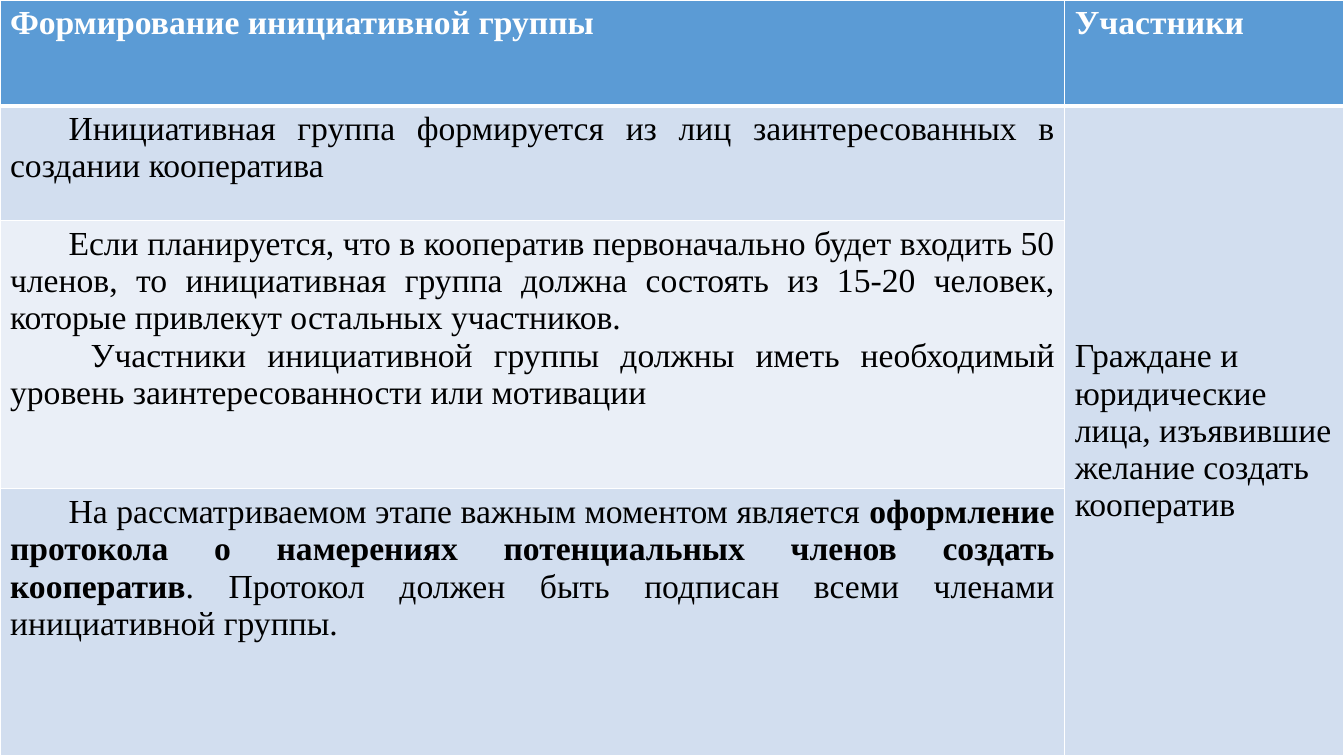
from lxml.etree import SubElement
from pptx import Presentation
from pptx.dml.color import RGBColor
from pptx.enum.text import MSO_ANCHOR, PP_ALIGN
from pptx.oxml.ns import qn
from pptx.util import Inches, Pt

WHITE, BLACK = "FFFFFF", "000000"
HEADER_BLUE, BAND_DARK, BAND_LIGHT = "5B9BD5", "D2DEEF", "EAEFF7"
COLUMN_WIDTHS = (10.56, 2.77)
ROW_HEIGHTS = (1.05, 1.14, 2.66, 2.65)
ROW_FILLS = (HEADER_BLUE, BAND_DARK, BAND_LIGHT, BAND_DARK)
FIRST_LINE = 0.58

HEADINGS = ("Формирование инициативной группы", "Участники")
PARTICIPANTS = "Граждане и юридические лица, изъявившие желание создать кооператив"
STAGES = (
    [(FIRST_LINE, [("Инициативная группа формируется из лиц заинтересованных в создании кооператива", False)])],
    [
        (FIRST_LINE, [("Если планируется, что в кооператив первоначально будет входить 50 членов, "
                       "то инициативная группа должна состоять из 15-20 человек, "
                       "которые привлекут остальных участников.", False)]),
        (0.8, [("Участники инициативной группы должны иметь необходимый "
                "уровень заинтересованности или мотивации", False)]),
    ],
    [(FIRST_LINE, [
        ("На рассматриваемом этапе важным моментом является ", False),
        ("оформление протокола о намерениях потенциальных членов создать кооператив", True),
        (". Протокол должен быть подписан всеми членами инициативной группы.", False),
    ])],
)


def rgb(value):
    """Turn a hex string into a colour."""
    return RGBColor.from_string(value)


def set_borders(cell, top, bottom):
    """Draw white borders with the given top and bottom widths in points."""
    properties = cell._tc.get_or_add_tcPr()
    for side, width in {"L": 1, "R": 1, "T": top, "B": bottom}.items():
        border = SubElement(properties, qn(f"a:ln{side}"), w=str(Pt(width)))
        fill = SubElement(border, qn("a:solidFill"))
        SubElement(fill, qn("a:srgbClr"), val=WHITE)


def add_runs(paragraph, runs, color):
    """Add (text, bold) runs to a paragraph."""
    for text, bold in runs:
        run = paragraph.add_run()
        run.text = text
        run.font.color.rgb = rgb(color)
        for name, value in {"name": "Times New Roman", "size": Pt(24), "bold": bold}.items():
            setattr(run.font, name, value)


def write_stage(cell, paragraphs):
    """Write justified paragraphs with first-line indents."""
    frame = cell.text_frame
    for index, (indent, runs) in enumerate(paragraphs):
        paragraph = frame.add_paragraph() if index else frame.paragraphs[0]
        paragraph.alignment = PP_ALIGN.JUSTIFY
        properties = paragraph._p.get_or_add_pPr()
        for name, value in {"marL": 0, "indent": Inches(indent)}.items():
            properties.set(name, str(value))
        add_runs(paragraph, runs, BLACK)


def add_grid(slide):
    """Add the full-slide table with its bands and borders."""
    grid = slide.shapes.add_table(
        len(ROW_HEIGHTS), len(COLUMN_WIDTHS), 0, 0,
        Inches(sum(COLUMN_WIDTHS)), Inches(sum(ROW_HEIGHTS))).table
    for column, width in zip(grid.columns, COLUMN_WIDTHS):
        column.width = Inches(width)
    for index, (row, height, color) in enumerate(zip(grid.rows, ROW_HEIGHTS, ROW_FILLS)):
        row.height = Inches(height)
        for cell in row.cells:
            set_borders(cell, top=3 if index == 1 else 1, bottom=3 if index == 0 else 1)
            cell.fill.solid()
            cell.fill.fore_color.rgb = rgb(color)
    return grid


def main():
    """Build the slide and save it."""
    deck = Presentation()
    deck.slide_width, deck.slide_height = Inches(13.33), Inches(7.5)
    slide = deck.slides.add_slide(deck.slide_layouts[6])
    grid = add_grid(slide)
    for column, heading in enumerate(HEADINGS):
        add_runs(grid.cell(0, column).text_frame.paragraphs[0], [(heading, True)], WHITE)
    for row, paragraphs in enumerate(STAGES, start=1):
        write_stage(grid.cell(row, 0), paragraphs)
    participants = grid.cell(1, 1)
    participants.merge(grid.cell(len(STAGES), 1))
    participants.vertical_anchor = MSO_ANCHOR.MIDDLE
    add_runs(participants.text_frame.paragraphs[0], [(PARTICIPANTS, False)], BLACK)
    deck.save("out.pptx")


if __name__ == "__main__":
    main()
